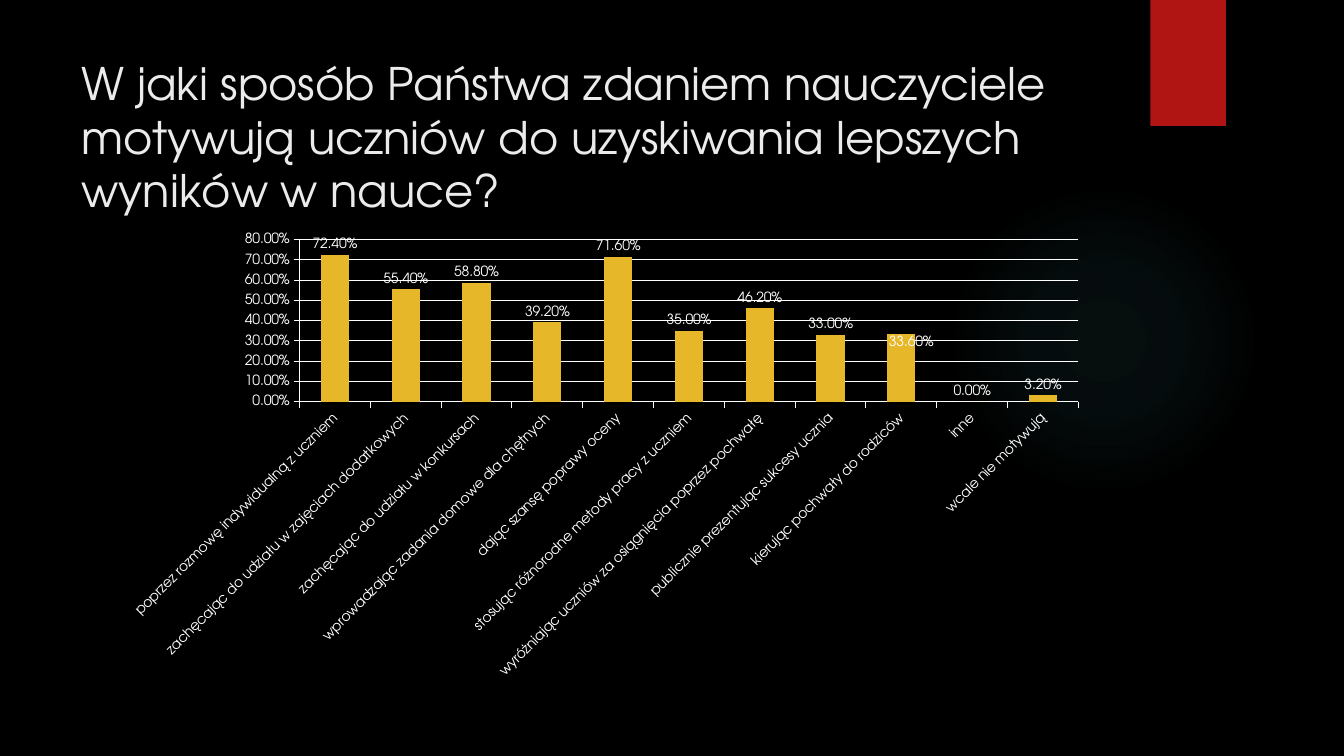
import pptx
import pptx.chart.data
import pptx.dml.color
import pptx.enum.chart
import pptx.enum.shapes
import pptx.enum.text
import pptx.oxml
import pptx.oxml.ns
import pptx.util
from pptx.util import Inches

COLORS = {"background": "000000", "title": "EBEBEB", "text": "FFFFFF",
          "ribbon": "B01513", "bar": "E6B729", "glow": "50B9C1"}
FONT = "TeX Gyre Adventor"
PERCENT = "0.00%"


def format_font(font, size, color):
    font.name = FONT
    font.size = pptx.util.Pt(size)
    font.bold = False
    font.color.rgb = pptx.dml.color.RGBColor.from_string(COLORS[color])


def write_text(text_frame, text, size, color, alignment, anchor):
    text_frame.word_wrap = True
    text_frame.auto_size = pptx.enum.text.MSO_AUTO_SIZE.NONE
    text_frame.vertical_anchor = anchor
    paragraph = text_frame.paragraphs[0]
    paragraph.alignment = alignment
    paragraph.line_spacing = 1.0
    paragraph.space_before = pptx.util.Pt(0)
    run = paragraph.add_run()
    run.text = text
    format_font(run.font, size, color)


presentation = pptx.Presentation()
presentation.slide_width = Inches(13.33)
presentation.slide_height = Inches(7.5)
slide = presentation.slides.add_slide(presentation.slide_layouts[5])
slide.background.fill.solid()
slide.background.fill.fore_color.rgb = pptx.dml.color.RGBColor.from_string(COLORS["background"])

title = slide.shapes.title
title.left, title.top = Inches(0.71), Inches(0.5)
title.width, title.height = Inches(10.29), Inches(1.53)
write_text(title.text_frame,
           "W jaki sposób Państwa zdaniem nauczyciele motywują uczniów "
           "do uzyskiwania lepszych wyników w nauce?",
           size=32, color="title", alignment=pptx.enum.text.PP_ALIGN.LEFT,
           anchor=pptx.enum.text.MSO_ANCHOR.TOP)

glow = slide.shapes.add_shape(pptx.enum.shapes.MSO_SHAPE.OVAL,
                              Inches(9.41), Inches(1.83), Inches(3.08), Inches(3.08))
glow.shadow.inherit = False
glow.line.fill.background()
stops = "".join(
    f'<a:gs pos="{position * 1000}"><a:srgbClr val="{COLORS["glow"]}">'
    f'<a:alpha val="{opacity * 1000}"/></a:srgbClr></a:gs>'
    for position, opacity in ((0, 7), (36, 6), (69, 0)))
gradient = pptx.oxml.parse_xml(
    f'<a:gradFill {pptx.oxml.ns.nsdecls("a")}><a:gsLst>{stops}</a:gsLst>'
    '<a:path path="circle"><a:fillToRect l="50000" t="50000" r="50000" b="50000"/></a:path>'
    '</a:gradFill>')
glow.element.spPr.find(pptx.oxml.ns.qn("a:prstGeom")).addnext(gradient)

ribbon = slide.shapes.add_shape(pptx.enum.shapes.MSO_SHAPE.RECTANGLE,
                                Inches(11.41), Inches(0), Inches(0.75), Inches(1.25))
ribbon.shadow.inherit = False
ribbon.line.fill.background()
ribbon.fill.solid()
ribbon.fill.fore_color.rgb = pptx.dml.color.RGBColor.from_string(COLORS["ribbon"])

answers = {
    "poprzez rozmowę indywidualną z uczniem": 0.724,
    "zachęcając do udziału w zajęciach dodatkowych": 0.554,
    "zachęcając do udziału w konkursach": 0.588,
    "wprowadzając zadania domowe dla chętnych": 0.392,
    "dając szansę poprawy oceny": 0.716,
    "stosując różnorodne metody pracy z uczniem": 0.35,
    "wyróżniając uczniów za osiągnięcia poprzez pochwałę": 0.462,
    "publicznie prezentując sukcesy ucznia": 0.33,
    "kierując pochwały do rodziców": 0.336,
    "inne": 0,
    "wcale nie motywują": 0.032,
}
chart_data = pptx.chart.data.CategoryChartData(number_format=PERCENT)
chart_data.categories = list(answers)
chart_data.add_series("Series 1", list(answers.values()))
chart = slide.shapes.add_chart(pptx.enum.chart.XL_CHART_TYPE.COLUMN_CLUSTERED,
                               Inches(1.21), Inches(2.24), Inches(9.78), Inches(4.59),
                               chart_data).chart
chart.has_legend = False
chart.has_title = False
format_font(chart.font, 10, "text")
plot = chart.plots[0]
plot.gap_width = 150
plot.vary_by_categories = False

value_axis = chart.value_axis
value_axis.minimum_scale, value_axis.maximum_scale = 0, 0.8
value_axis.major_unit = 0.1
value_axis.has_major_gridlines = True
value_axis.tick_labels.number_format = PERCENT
value_axis.tick_labels.number_format_is_linked = False
for axis in (chart.category_axis, value_axis):
    axis.major_tick_mark = pptx.enum.chart.XL_TICK_MARK.OUTSIDE
    format_font(axis.tick_labels.font, 10, "text")
for line in (chart.category_axis.format.line, value_axis.format.line,
             value_axis.major_gridlines.format.line):
    line.width = pptx.util.Pt(0.75)
    line.color.rgb = pptx.dml.color.RGBColor.from_string(COLORS["text"])
category_text = chart.category_axis._element.find(pptx.oxml.ns.qn("c:txPr"))
category_text.find(pptx.oxml.ns.qn("a:bodyPr")).set("rot", "-2700000")

series = plot.series[0]
series.format.fill.solid()
series.format.fill.fore_color.rgb = pptx.dml.color.RGBColor.from_string(COLORS["bar"])
labels = series.data_labels
labels.show_value = True
labels.number_format = PERCENT
labels.number_format_is_linked = False
labels.position = pptx.enum.chart.XL_LABEL_POSITION.OUTSIDE_END
format_font(labels.font, 10, "text")

parents_label = series.points[8].data_label
parents_label.position = pptx.enum.chart.XL_LABEL_POSITION.OUTSIDE_END
format_font(parents_label.font, 10, "text")
label_index = labels._element.find(pptx.oxml.ns.qn("c:dLbl")).find(pptx.oxml.ns.qn("c:idx"))
namespace = pptx.oxml.ns.nsdecls("c")
label_index.addnext(pptx.oxml.parse_xml(
    f'<c:numFmt {namespace} formatCode="{PERCENT}" sourceLinked="0"/>'))
label_index.addnext(pptx.oxml.parse_xml(
    f'<c:layout {namespace}><c:manualLayout><c:x val="0.01"/><c:y val="0.04"/>'
    '</c:manualLayout></c:layout>'))

plot_area = chart._chartSpace.chart.plotArea
for layout in plot_area.findall(pptx.oxml.ns.qn("c:layout")):
    plot_area.remove(layout)
plot_area.insert(0, pptx.oxml.parse_xml(
    f'<c:layout {namespace}><c:manualLayout><c:layoutTarget val="inner"/>'
    '<c:xMode val="edge"/><c:yMode val="edge"/><c:x val="0.18"/><c:y val="0.03"/>'
    '<c:w val="0.79"/><c:h val="0.35"/></c:manualLayout></c:layout>'))

presentation.save("out.pptx")
